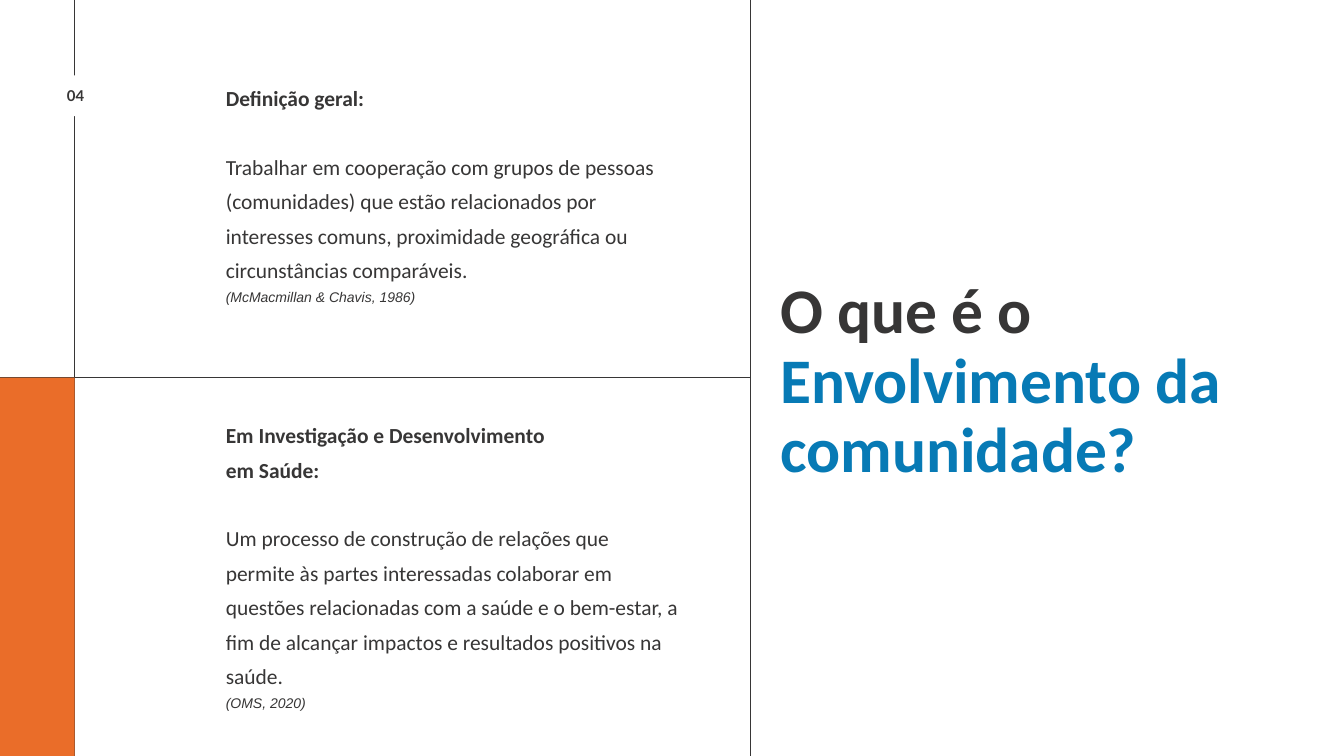
"""Build the slide that defines community involvement."""
from pptx import Presentation
from pptx.dml.color import RGBColor
from pptx.enum.shapes import MSO_CONNECTOR as CONN, MSO_SHAPE as SHAPE
from pptx.enum.text import MSO_AUTO_SIZE as FIT, PP_ALIGN as ALIGN
from pptx.oxml.ns import qn
from pptx.util import Inches, Pt
from lxml.etree import SubElement

DARK = RGBColor(0x37, 0x36, 0x36)
BLUE = RGBColor(0x07, 0x7A, 0xB5)
ORANGE = RGBColor(0xEA, 0x6D, 0x29)
WHITE = RGBColor(0xFF, 0xFF, 0xFF)

W, H = 20, 11.25
MARGIN_X, DIVIDER_X, MID_Y = 1.11, 11.16, 5.62
PAGE = "04"
TITLE = [("O que é o ", DARK), ("Envolvimento da comunidade?", BLUE)]
DEFINITIONS = [
    {
        "box": (3.36, 1.14, 6.46, 3.38),
        "heading": ["Definição geral:"],
        "body": "Trabalhar em cooperação com grupos de pessoas (comunidades) que estão "
                "relacionados por interesses comuns, proximidade geográfica ou "
                "circunstâncias comparáveis.",
        "source": "(McMacmillan & Chavis, 1986)",
    },
    {
        "box": (3.36, 6.16, 6.79, 4.93),
        "heading": ["Em Investigação e Desenvolvimento", "em Saúde:"],
        "body": "Um processo de construção de relações que permite às partes interessadas "
                "colaborar em questões relacionadas com a saúde e o bem-estar, a fim de "
                "alcançar impactos e resultados positivos na saúde.",
        "source": "(OMS, 2020)",
    },
]


def add_block(s, x, y, w, h, color):
    sp = s.shapes.add_shape(SHAPE.RECTANGLE, Inches(x), Inches(y), Inches(w), Inches(h))
    sp.shadow.inherit = False
    sp.fill.solid()
    sp.fill.fore_color.rgb = color
    sp.line.fill.background()


def add_rule(s, x1, y1, x2, y2):
    line = s.shapes.add_connector(CONN.STRAIGHT, Inches(x1), Inches(y1), Inches(x2), Inches(y2))
    line.line.color.rgb = DARK
    line.line.width = Pt(0.75)
    SubElement(line._element.spPr, qn("a:effectLst"))


def add_box(s, x, y, w, h):
    tf = s.shapes.add_textbox(Inches(x), Inches(y), Inches(w), Inches(h)).text_frame
    tf.margin_left = tf.margin_top = tf.margin_right = tf.margin_bottom = 0
    tf.word_wrap = True
    tf.auto_size = FIT.SHAPE_TO_FIT_TEXT
    return tf


def add_text(tf, text, size=23, leading=36.8, font="Calibri", bold=False, italic=False,
             color=DARK, align=ALIGN.LEFT, before=0):
    """Add one paragraph given as a string or as (text, colour) runs."""
    p = tf.paragraphs[0] if not tf.text else tf.add_paragraph()
    p.alignment = align
    p.line_spacing = Pt(leading)
    p.space_before = Pt(before)
    for part, part_color in [(text, color)] if isinstance(text, str) else text:
        r = p.add_run()
        r.text = part
        r.font.name, r.font.size = font, Pt(size)
        r.font.bold, r.font.italic = bold, italic
        r.font.color.rgb = part_color


def main():
    prs = Presentation()
    prs.slide_width, prs.slide_height = Inches(W), Inches(H)
    s = prs.slides.add_slide(prs.slide_layouts[6])

    add_rule(s, MARGIN_X, 0, MARGIN_X, H)
    add_block(s, 0.69, 1.12, 0.86, 0.61, WHITE)
    add_text(add_box(s, 0.76, 1.31, 0.73, 0.25), PAGE, size=16, leading=17.6,
             font="Lato", bold=True, align=ALIGN.CENTER)
    add_rule(s, 0, MID_Y, DIVIDER_X, MID_Y)
    add_rule(s, DIVIDER_X, 0, DIVIDER_X, H)
    add_block(s, 0, MID_Y, MARGIN_X, H - MID_Y, ORANGE)

    add_text(add_box(s, 11.61, 4.11, 7.9, 3.16), TITLE, size=68, leading=74.8, bold=True)
    for d in DEFINITIONS:
        tf = add_box(s, *d["box"])
        for line in d["heading"]:
            add_text(tf, line, bold=True)
        add_text(tf, d["body"], before=36.8)
        add_text(tf, d["source"], size=15, leading=24, font="Arial", italic=True)

    prs.save("out.pptx")


if __name__ == "__main__":
    main()
